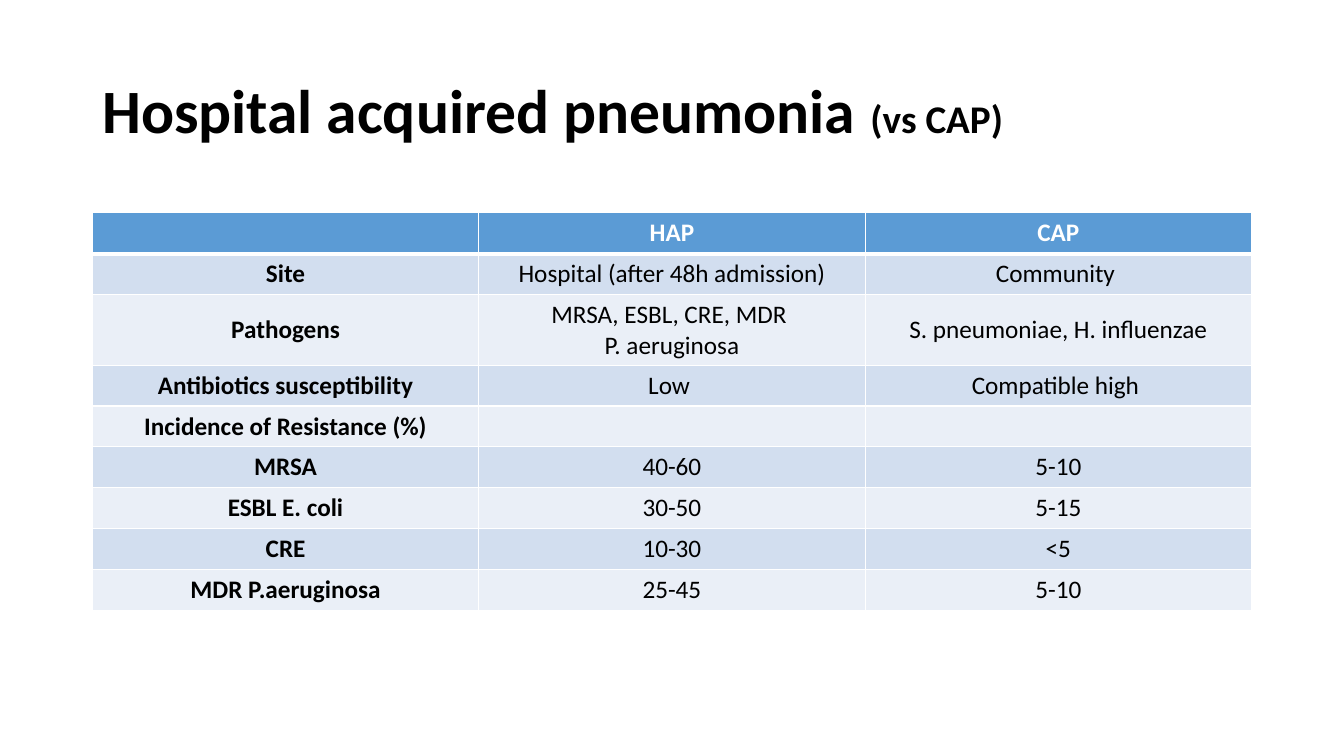
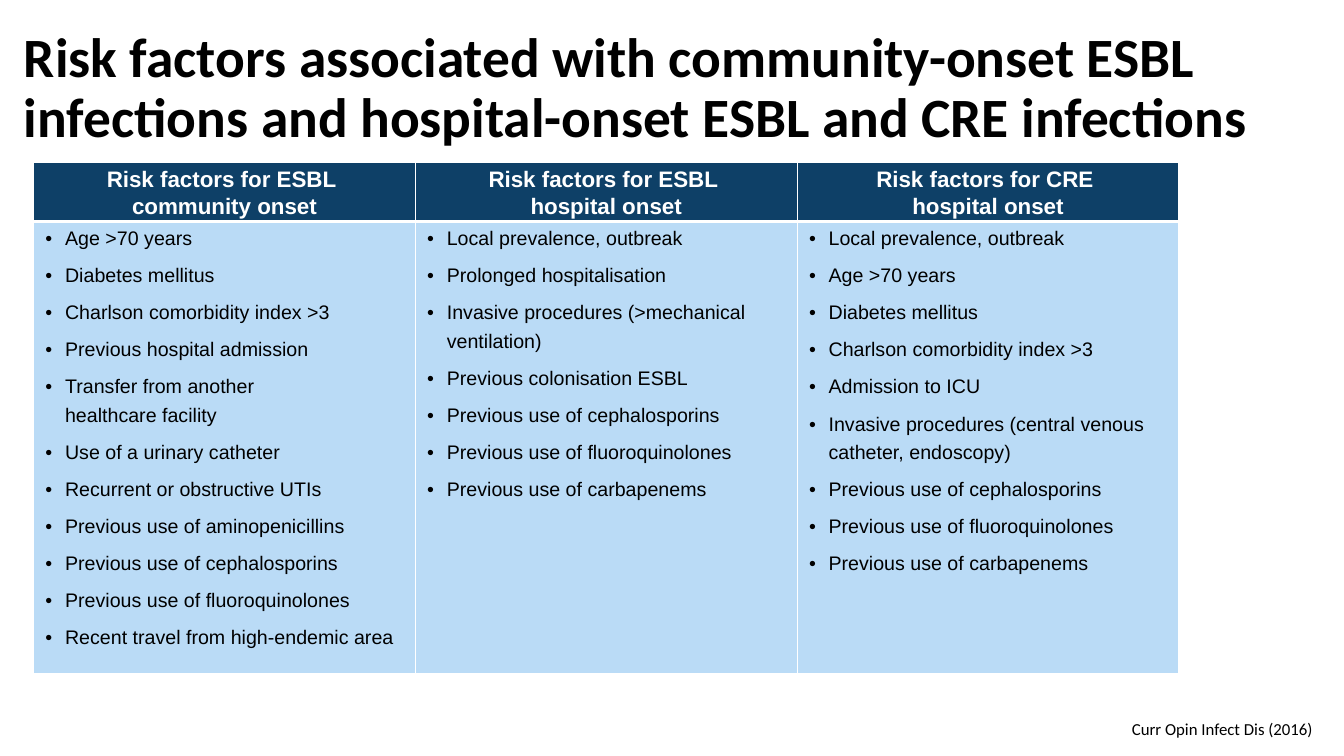
from copy import deepcopy
from dataclasses import dataclass
from typing import NamedTuple

from pptx import Presentation
from pptx.dml.color import RGBColor
from pptx.enum.text import MSO_ANCHOR as Anchor, PP_ALIGN as Align
from pptx.oxml.ns import qn
from pptx.util import Pt
from lxml.etree import SubElement

# Colours
BLACK = RGBColor(0x00, 0x00, 0x00)
WHITE = RGBColor(0xFF, 0xFF, 0xFF)
BLUE = RGBColor(0x5B, 0x9B, 0xD5)
BAND_DARK = RGBColor(0xD2, 0xDE, 0xEF)
BAND_LIGHT = RGBColor(0xEA, 0xEF, 0xF7)
NAVY = RGBColor(0x0E, 0x40, 0x67)
SKY = RGBColor(0xBA, 0xDB, 0xF6)

TITLE_PARA = {"line_spacing": 0.9}
THIN, THICK = 1, 3
BULLET_INDENT = Pt(14)


class Box(NamedTuple):
    left: float
    top: float
    width: float
    height: float


@dataclass(frozen=True)
class CellStyle:
    fill: RGBColor
    font: dict
    para: dict
    anchor: Anchor = Anchor.MIDDLE
    margins: tuple[float, float] = (7.2, 3.6)
    top_line: float = THIN
    bottom_line: float = THIN
    bullets: bool = False


def font_format(name: str, size: float, color: RGBColor = BLACK, bold: bool = False) -> dict:
    return {"name": name, "size": Pt(size), "bold": bold, "color": color}


def add_text(p, text: str, font: dict) -> None:
    """Add runs to a paragraph, with a line break at each newline."""
    for i, line in enumerate(text.split("\n")):
        if i:
            p.add_line_break()
        r = p.add_run()
        r.text = line
        for key, value in font.items():
            if key == "color":
                r.font.color.rgb = value
            else:
                setattr(r.font, key, value)
        if i:  # the break takes the size of the text after it
            r._r.getprevious().append(deepcopy(r._r.rPr))


def format_para(p, para: dict) -> None:
    for key, value in para.items():
        setattr(p, key, value)


def add_bullet(p) -> None:
    pPr = p._p.get_or_add_pPr()
    pPr.set("marL", str(BULLET_INDENT))
    pPr.set("indent", str(-BULLET_INDENT))
    SubElement(pPr, qn("a:buFont")).set("typeface", "Arial")
    SubElement(pPr, qn("a:buChar")).set("char", "•")


def add_box(s, box: Box, runs: list[tuple[str, dict]], para: dict,
            anchor: Anchor = Anchor.TOP, wrap: bool = True) -> None:
    tf = s.shapes.add_textbox(*map(Pt, box)).text_frame
    tf.word_wrap = wrap
    tf.vertical_anchor = anchor
    p = tf.paragraphs[0]
    format_para(p, para)
    for text, font in runs:
        add_text(p, text, font)


def add_title(s, box: Box, *parts: tuple[str, float]) -> None:
    runs = [(text, font_format("Calibri", size, bold=True)) for text, size in parts]
    add_box(s, box, runs, TITLE_PARA, Anchor.MIDDLE)


def fill_cell(cell, paras: list[str], style: CellStyle) -> None:
    # Borders come before the fill in the cell properties
    tcPr = cell._tc.get_or_add_tcPr()
    for tag, width in (("lnL", THIN), ("lnR", THIN),
                       ("lnT", style.top_line), ("lnB", style.bottom_line)):
        ln = SubElement(tcPr, qn(f"a:{tag}"), w=str(Pt(width)))
        SubElement(SubElement(ln, qn("a:solidFill")), qn("a:srgbClr")).set("val", str(WHITE))
    cell.fill.solid()
    cell.fill.fore_color.rgb = style.fill
    cell.vertical_anchor = style.anchor
    cell.margin_left = cell.margin_right = Pt(style.margins[0])
    cell.margin_top = cell.margin_bottom = Pt(style.margins[1])

    tf = cell.text_frame
    for i, text in enumerate(paras):
        p = tf.add_paragraph() if i else tf.paragraphs[0]
        format_para(p, style.para)
        if style.bullets:
            add_bullet(p)
        if text:
            add_text(p, text, style.font)


def add_grid(s, left: float, top: float, col_width: float, row_heights: list[float],
             rows: list[list[list[str]]], styles: list[list[CellStyle]]) -> None:
    """Draw a table of equal columns; each cell is a list of paragraphs."""
    n_cols = len(rows[0])
    box = Box(left, top, col_width * n_cols, sum(row_heights))
    table = s.shapes.add_table(len(rows), n_cols, *map(Pt, box)).table
    for col in table.columns:
        col.width = Pt(col_width)
    for row, height in zip(table.rows, row_heights):
        row.height = Pt(height)
    for row, texts, row_styles in zip(table.rows, rows, styles):
        for cell, paras, style in zip(row.cells, texts, row_styles):
            fill_cell(cell, paras, style)


# Slide 1: comparison of hospital and community pneumonia
COMPARISON = [
    ("", "HAP", "CAP"),
    ("Site", "Hospital (after 48h admission)", "Community "),
    ("Pathogens", "MRSA, ESBL, CRE, MDR |P. aeruginosa", "S. pneumoniae, H. influenzae"),
    ("Antibiotics susceptibility", "Low ", "Compatible high "),
    ("Incidence of Resistance (%)", "", ""),
    ("MRSA", "40-60", "5-10"),
    ("ESBL E. coli", "30-50", "5-15"),
    ("CRE", "10-30", "<5"),
    ("MDR P.aeruginosa", "25-45", "5-10"),
]


def comparison_style(row: int, col: int) -> CellStyle:
    header = row == 0
    fill = BLUE if header else BAND_DARK if row % 2 else BAND_LIGHT
    return CellStyle(
        fill,
        font_format("Calibri", 18, WHITE if header else BLACK, header or col == 0),
        {"alignment": Align.CENTER},
        top_line=THICK if row == 1 else THIN,
        bottom_line=THICK if header else THIN,
    )


def build_comparison(s) -> None:
    add_title(s, Box(66, 28.8, 828, 104.4),
              ("Hospital acquired pneumonia ", 44), ("(vs CAP)", 28))
    rows = [[text.split("|") for text in row] for row in COMPARISON]
    styles = [[comparison_style(i, j) for j in range(3)] for i in range(len(rows))]
    add_grid(s, 66, 152, 276, [29.2] * len(rows), rows, styles)


# Slide 2: risk factors
RISK_FACTORS = {
    "Risk factors for ESBL \ncommunity onset": [
        "Age >70 years",
        "Diabetes mellitus",
        "Charlson comorbidity index >3",
        "Previous hospital admission",
        "Transfer from another \nhealthcare facility",
        "Use of a urinary catheter",
        "Recurrent or obstructive UTIs",
        "Previous use of aminopenicillins",
        "Previous use of cephalosporins",
        "Previous use of fluoroquinolones",
        "Recent travel from high-endemic area",
    ],
    "Risk factors for ESBL \nhospital onset": [
        "Local prevalence, outbreak",
        "Prolonged hospitalisation",
        "Invasive procedures (>mechanical ventilation)",
        "Previous colonisation ESBL",
        "Previous use of cephalosporins",
        "Previous use of fluoroquinolones",
        "Previous use of carbapenems",
    ],
    "Risk factors for CRE \nhospital onset": [
        "Local prevalence, outbreak",
        "Age >70 years",
        "Diabetes mellitus",
        "Charlson comorbidity index >3",
        "Admission to ICU",
        "Invasive procedures (central venous catheter, endoscopy)",
        "Previous use of cephalosporins",
        "Previous use of fluoroquinolones",
        "Previous use of carbapenems",
    ],
}
RISK_HEADER = CellStyle(
    NAVY, font_format("Arial", 16, WHITE, True),
    {"alignment": Align.CENTER, "line_spacing": 1.1, "space_after": Pt(10)},
    margins=(8.5, 0), bottom_line=THICK,
)
RISK_BODY = CellStyle(
    SKY, font_format("Arial", 14),
    {"line_spacing": 1.3, "space_after": Pt(6)},
    anchor=Anchor.TOP, margins=(8.5, 0), top_line=THICK, bullets=True,
)


def build_risk_factors(s) -> None:
    add_title(s, Box(10, 11.5, 939.6, 104.4),
              ("Risk factors associated with community-onset ESBL infections "
               "and hospital-onset ESBL and CRE infections", 39.6))
    rows = [[[head] for head in RISK_FACTORS], list(RISK_FACTORS.values())]
    add_grid(s, 24, 116, 272.7, [41, 323.3], rows, [[RISK_HEADER] * 3, [RISK_BODY] * 3])
    add_box(s, Box(801.4, 509.8, 148.3, 21.6),
            [("Curr Opin Infect Dis (2016)", font_format("Calibri", 12))], {}, wrap=False)


def main() -> None:
    prs = Presentation()
    prs.slide_width, prs.slide_height = Pt(960), Pt(540)
    for build in (build_comparison, build_risk_factors):
        build(prs.slides.add_slide(prs.slide_layouts[6]))
    prs.save("out.pptx")


if __name__ == "__main__":
    main()
